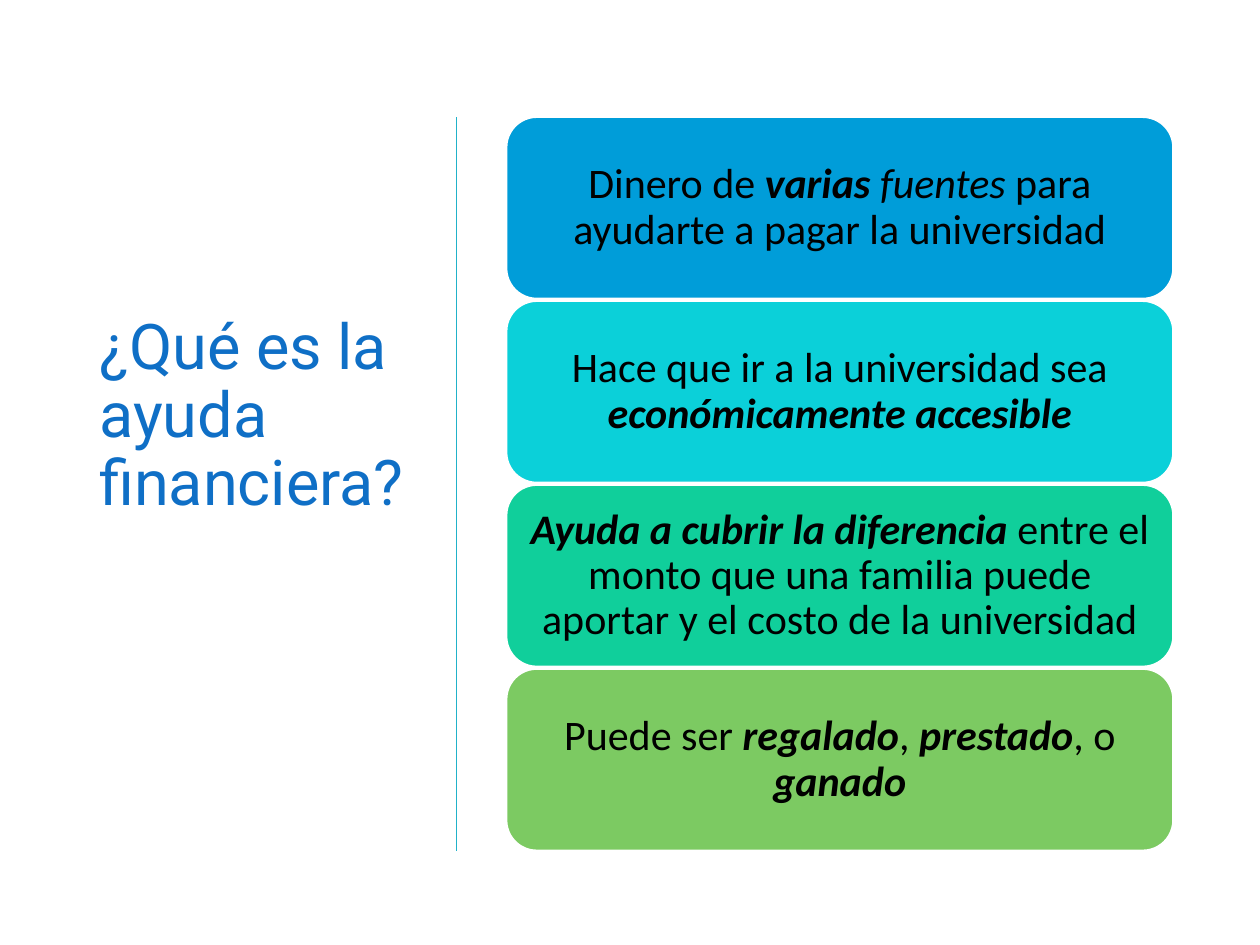
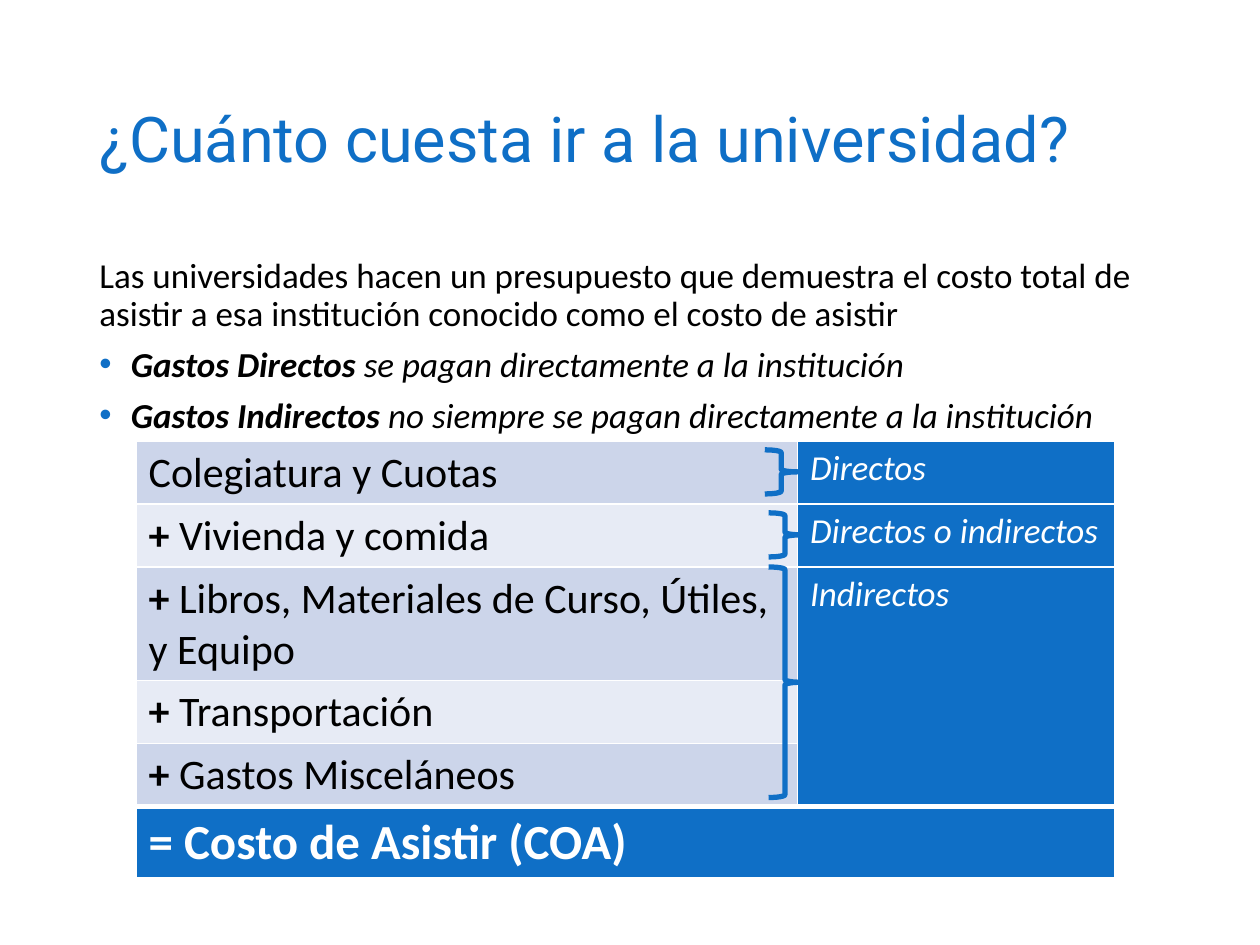
from lxml.etree import SubElement
from pptx import Presentation
from pptx.dml.color import RGBColor
from pptx.enum.shapes import MSO_CONNECTOR as Connector, MSO_SHAPE as Shape
from pptx.enum.text import MSO_ANCHOR as Anchor, PP_ALIGN as Align
from pptx.oxml.ns import qn
from pptx.util import Inches, Pt

# Content: each run is (text, style), where b is bold and i is italic
REASONS_TITLE = "¿Qué es la ayuda financiera?"
REASONS = [
    ("sky", [("Dinero de ", ""), ("varias ", "bi"), ("fuentes ", "i"),
             ("para ayudarte a pagar la universidad", "")]),
    ("aqua", [("Hace que ir a la universidad sea ", ""),
              ("económicamente accesible", "bi")]),
    ("mint", [("Ayuda a cubrir la diferencia", "bi"),
              (" entre el monto que una familia puede aportar "
               "y el costo de la universidad", "")]),
    ("leaf", [("Puede ser ", ""), ("regalado", "bi"), (", ", ""),
              ("prestado", "bi"), (", o ", ""), ("ganado", "bi")]),
]
COST_TITLE = "¿Cuánto cuesta ir a la universidad?"
BUDGET = [("Las universidades hacen un presupuesto que demuestra el costo total "
           "de asistir a esa institución conocido como el costo de asistir", "")]
EXPENSE_KINDS = [
    [("Gastos Directos", "bi"), (" se pagan directamente a la institución", "i")],
    [("Gastos Indirectos ", "bi"),
     ("no siempre se pagan directamente a la institución", "i")],
]
COSTS = [
    [("Colegiatura y Cuotas", "")],
    [("+", "b"), (" Vivienda y comida", "")],
    [("+", "b"), (" Libros, Materiales de Curso, Útiles, y Equipo", "")],
    [("+", "b"), (" Transportación", "")],
    [("+", "b"), (" Gastos Misceláneos", "")],
]
PAYMENTS = ["Directos", "Directos o indirectos", "Indirectos"]
TOTAL = "= Costo de Asistir (COA)"

# Shared look
COLORS = {"blue": "0F6FC6", "sky": "009DD9", "aqua": "0BD0D9", "mint": "10CF9B",
          "leaf": "7CCA62", "rule": "21B2C9", "band": "CCD5EA",
          "pale": "E7EBF5", "white": "FFFFFF", "black": "000000"}
TITLE_FONT, BODY_FONT = "Roboto", "Calibri"
WIDTH, HEIGHT = 10, 7.5
MARGIN = 0.69
CONTENT_WIDTH = WIDTH - 2 * MARGIN

# Reason cards
CARD_LEFT, CARD_TOP, CARD_HEIGHT, CARD_GAP = 4.02, 0.93, 1.44, 0.02
CARD_WIDTH = WIDTH - MARGIN - CARD_LEFT
RULE_X, RULE_BOTTOM = 3.62, 6.75

# Cost table and braces
TABLE_LEFT, TABLE_TOP = 1.08, 3.5
COLUMNS = [5.25, 2.52]
ROWS = [0.45, 0.45, 0.82, 0.45, 0.45, 0.51]
BRACE_WIDTH = 0.26
BRACES = [(6.07, 3.57, 0.35), (6.1, 4.07, 0.35), (6.1, 4.5, 1.83)]


def color(name):
    return RGBColor.from_string(COLORS[name])


def box(*lengths):
    return [Inches(length) for length in lengths]


def write(paragraph, runs, size, ink="black", face=BODY_FONT, spacing=None):
    font = paragraph.font
    font.name, font.size = face, Pt(size)
    font.color.rgb = color(ink)
    if spacing:
        paragraph.line_spacing = spacing
    for text, style in runs:
        run = paragraph.add_run()
        run.text = text
        if "b" in style:
            run.font.bold = True
        if "i" in style:
            run.font.italic = True


def add_text(slide, place, anchor=Anchor.TOP):
    frame = slide.shapes.add_textbox(*box(*place)).text_frame
    frame.word_wrap = True
    frame.vertical_anchor = anchor
    return frame


def add_title(slide, text, top, width, height):
    frame = add_text(slide, (MARGIN, top, width, height), Anchor.MIDDLE)
    write(frame.paragraphs[0], [(text, "")], 36, "blue", TITLE_FONT, 0.9)


def add_bullet(paragraph):
    props = paragraph._p.get_or_add_pPr()
    props.set("marL", str(Inches(0.25)))
    props.set("indent", str(-Inches(0.25)))
    SubElement(SubElement(props, qn("a:buClr")), qn("a:srgbClr"), val=COLORS["blue"])
    SubElement(props, qn("a:buFont"), typeface="Arial")
    SubElement(props, qn("a:buChar"), char="•")


def add_borders(cell, top=1, bottom=1):
    props = cell._tc.get_or_add_tcPr()
    for place, (side, points) in enumerate(
            [("lnL", 1), ("lnR", 1), ("lnT", top), ("lnB", bottom)]):
        line = SubElement(props, qn("a:" + side), w=str(Pt(points)))
        fill = SubElement(line, qn("a:solidFill"))
        SubElement(fill, qn("a:srgbClr"), val=COLORS["white"])
        props.insert(place, line)


def fill_cell(cell, runs, size, ink, fill):
    cell.fill.solid()
    cell.fill.fore_color.rgb = color(fill)
    write(cell.text_frame.paragraphs[0], runs, size, ink)


def build_reasons(slide):
    add_title(slide, REASONS_TITLE, 0.13, 2.94, 6.36)

    # Cards
    for row, (fill, runs) in enumerate(REASONS):
        top = CARD_TOP + row * (CARD_HEIGHT + CARD_GAP)
        card = slide.shapes.add_shape(
            Shape.ROUNDED_RECTANGLE, *box(CARD_LEFT, top, CARD_WIDTH, CARD_HEIGHT))
        card.shadow.inherit = False
        card.fill.solid()
        card.fill.fore_color.rgb = color(fill)
        card.line.color.rgb = color("white")
        card.line.width = Pt(1)
        frame = card.text_frame
        frame.word_wrap = True
        frame.vertical_anchor = Anchor.MIDDLE
        frame.margin_top = frame.margin_bottom = Inches(0.1)
        frame.paragraphs[0].alignment = Align.CENTER
        write(frame.paragraphs[0], runs, 24, spacing=0.9)

    # Dividing rule
    rule = slide.shapes.add_connector(
        Connector.STRAIGHT, *box(RULE_X, CARD_TOP, RULE_X, RULE_BOTTOM))
    rule.line.color.rgb = color("rule")
    rule.line.width = Pt(0.5)
    SubElement(rule._element.spPr, qn("a:effectLst"))


def build_costs(slide):
    add_title(slide, COST_TITLE, 0.4, CONTENT_WIDTH, 1.45)

    # Introduction
    frame = add_text(slide, (MARGIN, 2, CONTENT_WIDTH, 4.76))
    write(frame.paragraphs[0], BUDGET, 20, spacing=0.9)
    for runs in EXPENSE_KINDS:
        paragraph = frame.add_paragraph()
        add_bullet(paragraph)
        paragraph.space_before = Pt(7.5)
        write(paragraph, runs, 20, spacing=0.9)

    # Cost table
    table = slide.shapes.add_table(
        len(ROWS), len(COLUMNS),
        *box(TABLE_LEFT, TABLE_TOP, sum(COLUMNS), sum(ROWS))).table
    table.first_row = table.horz_banding = False
    for column, width in zip(table.columns, COLUMNS):
        column.width = Inches(width)
    for row, height in zip(table.rows, ROWS):
        row.height = Inches(height)
    total_row = len(COSTS)
    table.cell(len(PAYMENTS) - 1, 1).merge(table.cell(total_row - 1, 1))
    table.cell(total_row, 0).merge(table.cell(total_row, 1))
    for row, runs in enumerate(COSTS):
        fill_cell(table.cell(row, 0), runs, 24, "black", ("band", "pale")[row % 2])
    for row, payment in enumerate(PAYMENTS):
        fill_cell(table.cell(row, 1), [(payment, "i")], 20, "white", "blue")
    fill_cell(table.cell(total_row, 0), [(TOTAL, "b")], 28, "white", "blue")
    for row in range(len(ROWS)):
        for column in range(len(COLUMNS)):
            add_borders(table.cell(row, column),
                        top=3 if row == total_row else 1,
                        bottom=3 if row == total_row - 1 else 1)

    # Braces linking costs to payments
    for left, top, height in BRACES:
        brace = slide.shapes.add_shape(
            Shape.RIGHT_BRACE, *box(left, top, BRACE_WIDTH, height))
        brace.shadow.inherit = False
        brace.fill.background()
        brace.line.color.rgb = color("blue")
        brace.line.width = Pt(3)


def main():
    deck = Presentation()
    deck.slide_width, deck.slide_height = box(WIDTH, HEIGHT)
    for build in (build_reasons, build_costs):
        build(deck.slides.add_slide(deck.slide_layouts[6]))
    deck.save("out.pptx")


if __name__ == "__main__":
    main()
